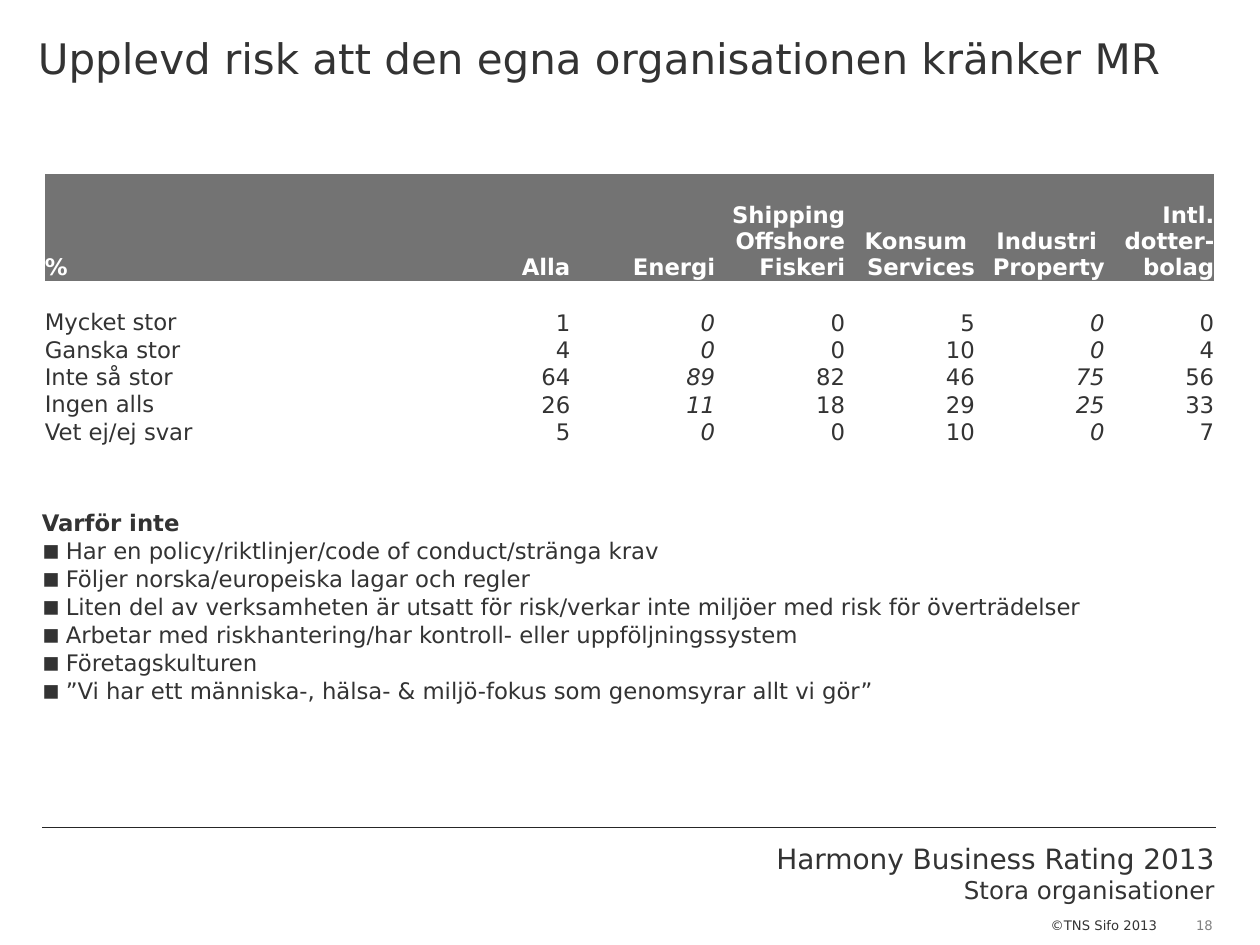
from lxml.etree import SubElement as Sub
from pptx import Presentation as Deck
from pptx.dml.color import RGBColor as Rgb
from pptx.enum.shapes import MSO_CONNECTOR as Link
from pptx.enum.text import MSO_ANCHOR as Anchor, MSO_AUTO_SIZE as Auto, PP_ALIGN as Align
from pptx.oxml.ns import qn
from pptx.util import Pt

INK, GREY, PALE, WHITE, RULE = "333333", "737373", "808080", "FFFFFF", "262626"
PLAIN = "{2D5ABB26-0587-4C30-8999-92F81FD0307C}"
HEAD = ["%", "Alla", "Energi", "Shipping\nOffshore\nFiskeri", "Konsum \nServices",
        "Industri \nProperty", "Intl.\ndotter-\nbolag"]
ROWS = [
    [""] * 7,
    ["Mycket stor", 1, 0, 0, 5, 0, 0],
    ["Ganska stor", 4, 0, 0, 10, 0, 4],
    ["Inte så stor", 64, 89, 82, 46, 75, 56],
    ["Ingen alls", 26, 11, 18, 29, 25, 33],
    ["Vet ej/ej svar", 5, 0, 0, 10, 0, 7],
]
COLS = [266.4, 33.9, 82.8, 74.2, 74.2, 74.2, 62.6]
SLANT = (2, 5)
WHY = [
    "Har en policy/riktlinjer/code of conduct/stränga krav",
    "Följer norska/europeiska lagar och regler",
    "Liten del av verksamheten är utsatt för risk/verkar inte miljöer med risk för överträdelser",
    "Arbetar med riskhantering/har kontroll- eller uppföljningssystem",
    "Företagskulturen",
    "”Vi har ett människa-, hälsa- & miljö-fokus som genomsyrar allt vi gör”",
]


def paint(code):
    return Rgb.from_string(code)


class Page:
    base = {"name": "DejaVu Sans", "size": 13, "color": INK}

    def __init__(self, deck):
        self.slide = deck.slides.add_slide(deck.slide_layouts[5])

    def style(self, font, look):
        for key, val in {**self.base, **look}.items():
            if key == "color":
                font.color.rgb = paint(val)
            else:
                setattr(font, key, Pt(val) if key == "size" else val)

    def put(self, para, text, align=Align.LEFT, **look):
        para.alignment = align
        if text:
            run = para.add_run()
            run.text = text
            self.style(run.font, look)
        else:
            size = look.get("size", self.base["size"])
            Sub(para._p, qn("a:endParaRPr"), sz=str(size * 100))

    def inset(self, item, *gaps):
        for side, gap in zip(("left", "top", "right", "bottom"), gaps):
            setattr(item, f"margin_{side}", Pt(gap))

    def place(self, item, *box):
        for key, val in zip(("left", "top", "width", "height"), box):
            setattr(item, key, Pt(val))

    def title(self, text, *box):
        item = self.slide.shapes.title
        self.place(item, *box)
        frame = item.text_frame
        frame.auto_size = Auto.NONE
        frame.word_wrap = True
        frame.vertical_anchor = Anchor.TOP
        self.inset(frame, 21.6, 18.7, 21.6, 0)
        self.put(frame.paragraphs[0], text, size=24)

    def text(self, box, lines, align=Align.LEFT, wrap=True, gaps=(7.2, 3.6, 7.2, 3.6)):
        frame = self.slide.shapes.add_textbox(*map(Pt, box)).text_frame
        frame.word_wrap = wrap
        self.inset(frame, *gaps)
        for i, (text, look) in enumerate(lines):
            para = frame.add_paragraph() if i else frame.paragraphs[0]
            self.put(para, text, align, **look)
        return frame

    def bullet(self, para):
        para.space_before = Pt(0.3)
        prop = para._p.get_or_add_pPr()
        prop.set("marL", str(Pt(13.7)))
        prop.set("indent", str(-Pt(13.7)))
        Sub(Sub(prop, qn("a:buClr")), qn("a:srgbClr"), val=INK)
        Sub(prop, qn("a:buSzPct"), val="120000")
        Sub(prop, qn("a:buFont"), typeface=self.base["name"])
        Sub(prop, qn("a:buChar"), char="▪")

    def line(self, x, y, end):
        rule = self.slide.shapes.add_connector(Link.STRAIGHT, Pt(x), Pt(y), Pt(end), Pt(y))
        rule.line.color.rgb = paint(RULE)
        rule.line.width = Pt(0.75)
        Sub(rule._element.spPr, qn("a:effectLst"))

    def table(self, x, y, head, rows, cols, top, step):
        data = [head] + rows
        high = [top] + [step] * len(rows)
        shape = self.slide.shapes.add_table(
            len(data), len(cols), Pt(x), Pt(y), Pt(sum(cols)), Pt(sum(high)))
        grid = shape.table
        grid.first_row = grid.horz_banding = False
        grid._tbl.tblPr.find(qn("a:tableStyleId")).text = PLAIN
        for col, wide in zip(grid.columns, cols):
            col.width = Pt(wide)
        for r, (vals, tall) in enumerate(zip(data, high)):
            grid.rows[r].height = Pt(tall)
            for c, val in enumerate(vals):
                self.cell(grid.cell(r, c), str(val), r, c)

    def cell(self, cell, text, r, c):
        cell.vertical_anchor = Anchor.BOTTOM
        self.inset(cell, 0, 0, 0, 0)
        if r:
            cell.fill.background()
            look = {"italic": c in SLANT}
        else:
            cell.fill.solid()
            cell.fill.fore_color.rgb = paint(GREY)
            look = {"bold": True, "color": WHITE}
        for i, part in enumerate(text.split("\n")):
            para = cell.text_frame.add_paragraph() if i else cell.text_frame.paragraphs[0]
            if r and c:
                para.line_spacing = 0.9
            self.put(para, part, Align.RIGHT if c else Align.LEFT, **look)


def main():
    deck = Deck()
    deck.slide_width, deck.slide_height = Pt(720), Pt(540)
    page = Page(deck)
    page.title("Upplevd risk att den egna organisationen kränker MR", 0, 0, 720, 83.5)
    page.table(25.6, 99.4, HEAD, ROWS, COLS, 61.2, 15.6)
    lines = [("Varför inte", {"bold": True})] + [(text, {}) for text in WHY]
    frame = page.text((16.8, 287.3, 677.5, 118.8), lines)
    for para in frame.paragraphs[1:]:
        page.bullet(para)
    page.line(24.2, 472.9, 694.6)
    page.text((371.5, 477.4, 329.8, 43.9), [
        ("Harmony Business Rating 2013", {"size": 16}),
        ("Stora organisationer", {"size": 14}),
    ], Align.RIGHT)
    page.text((593.3, 520.6, 79.2, 16.6), [("©TNS Sifo 2013", {"size": 7.5})])
    page.text((681.8, 524.2, 13, 9.4), [("18", {"size": 7.5, "color": PALE})],
              Align.CENTER, False, (0, 0, 0, 0))
    deck.save("out.pptx")


if __name__ == "__main__":
    main()
